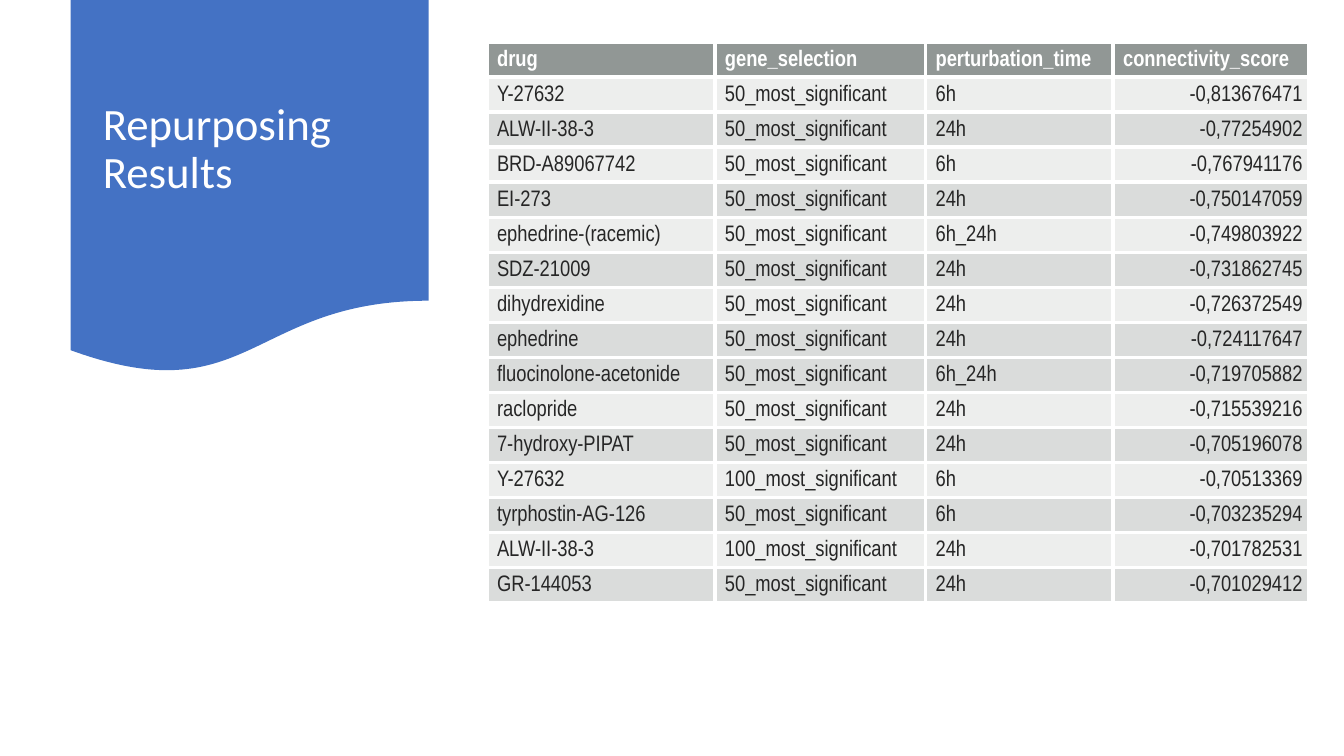
import lxml.etree
import pptx
import pptx.dml.color
import pptx.enum.shapes
import pptx.enum.text
import pptx.oxml.ns
import pptx.util

Inches = pptx.util.Inches
Pt = pptx.util.Pt
RGBColor = pptx.dml.color.RGBColor
Anchor = pptx.enum.text.MSO_ANCHOR
Align = pptx.enum.text.PP_ALIGN
qn = pptx.oxml.ns.qn

WHITE = RGBColor(0xFF, 0xFF, 0xFF)
BLUE = RGBColor(0x44, 0x72, 0xC4)
HEADER_GREY = RGBColor(0x63, 0x6B, 0x68)
BODY_GREY = RGBColor(0x87, 0x8E, 0x8B)
INK = RGBColor(0x26, 0x26, 0x26)

SLIDE_WIDTH, SLIDE_HEIGHT = Inches(13.33), Inches(7.5)
BANNER_BOX = (Inches(0.7), 0, Inches(3.55), Inches(3.72))
TABLE_BOX = (Inches(4.83), Inches(0.42), Inches(8.15), Inches(5.56))
COLUMN_SHARES = (2.26, 2.09, 1.86, 1.94)
BAND_SHIFT_ROW = 8

TITLE_FONT = {"name": "Calibri", "size": Pt(32), "bold": False}
TABLE_FONT = {"name": "Arial Narrow", "size": Pt(16)}
CELL_FORMAT = {
    "margin_left": Inches(0.1),
    "margin_right": Inches(0.06),
    "margin_top": Inches(0.03),
    "margin_bottom": Inches(0.06),
    "vertical_anchor": Anchor.BOTTOM,
}

HEADINGS = ("drug", "gene_selection", "perturbation_time", "connectivity_score")
RESULTS = (
    ("Y-27632", 50, "6h", "-0,813676471"),
    ("ALW-II-38-3", 50, "24h", "-0,77254902"),
    ("BRD-A89067742", 50, "6h", "-0,767941176"),
    ("EI-273", 50, "24h", "-0,750147059"),
    ("ephedrine-(racemic)", 50, "6h_24h", "-0,749803922"),
    ("SDZ-21009", 50, "24h", "-0,731862745"),
    ("dihydrexidine", 50, "24h", "-0,726372549"),
    ("ephedrine", 50, "24h", "-0,724117647"),
    ("fluocinolone-acetonide", 50, "6h_24h", "-0,719705882"),
    ("raclopride", 50, "24h", "-0,715539216"),
    ("7-hydroxy-PIPAT", 50, "24h", "-0,705196078"),
    ("Y-27632", 100, "6h", "-0,70513369"),
    ("tyrphostin-AG-126", 50, "6h", "-0,703235294"),
    ("ALW-II-38-3", 100, "24h", "-0,701782531"),
    ("GR-144053", 50, "24h", "-0,701029412"),
)


def apply_format(target, values):
    """Set each named attribute of the target."""
    for name, value in values.items():
        setattr(target, name, value)


def format_font(font, values, color):
    """Apply font values and a text colour."""
    apply_format(font, values)
    font.color.rgb = color


def add_title_banner(slide, box):
    """Place the wavy banner behind the slide title."""
    left, top, width, height = box
    banner = slide.shapes.add_shape(
        pptx.enum.shapes.MSO_SHAPE.FLOWCHART_DOCUMENT, left, top, width, height)
    banner.shadow.inherit = False
    banner.fill.solid()
    banner.fill.fore_color.rgb = BLUE
    banner.line.fill.background()

    title = slide.shapes.title
    title.element.addprevious(banner.element)
    apply_format(title, {
        "left": left + Inches(0.22), "top": top + Inches(0.19),
        "width": Inches(3.11), "height": Inches(2.59),
    })
    apply_format(title.text_frame, {
        "text": "Repurposing Results", "word_wrap": True,
        "auto_size": pptx.enum.text.MSO_AUTO_SIZE.NONE,
        "vertical_anchor": Anchor.MIDDLE,
    })
    para = title.text_frame.paragraphs[0]
    apply_format(para, {"alignment": Align.LEFT, "line_spacing": 0.9})
    format_font(para.font, TITLE_FONT, WHITE)


def paint_cell(cell, color, opacity):
    """Give a cell white borders and a translucent fill."""
    cell.fill.solid()
    cell.fill.fore_color.rgb = color
    properties = cell._tc.get_or_add_tcPr()
    tint = properties.find(qn("a:solidFill")).find(qn("a:srgbClr"))
    lxml.etree.SubElement(tint, qn("a:alpha"), val=str(opacity * 1000))
    for position, side in enumerate(("a:lnL", "a:lnR", "a:lnT", "a:lnB")):
        border = lxml.etree.Element(qn(side), w=str(Pt(3)))
        paint = lxml.etree.SubElement(border, qn("a:solidFill"))
        lxml.etree.SubElement(paint, qn("a:srgbClr"), val=str(WHITE))
        properties.insert(position, border)


def row_style(row):
    """Return fill colour, opacity, text colour and weight for a table row."""
    if row == 0:
        return HEADER_GREY, 70, WHITE, True
    dark = (row % 2 == 0) == (row <= BAND_SHIFT_ROW)
    return BODY_GREY, 30 if dark else 15, INK, False


def add_results_table(slide, box):
    """Fill the box with the table of drug scores."""
    left, top, width, height = box
    rows = [HEADINGS] + [
        (drug, f"{count}_most_significant", time, score)
        for drug, count, time, score in RESULTS]
    table = slide.shapes.add_table(
        len(rows), len(HEADINGS), left, top, width, height).table
    apply_format(table, {"first_row": False, "horz_banding": False})
    for column, share in zip(table.columns, COLUMN_SHARES):
        column.width = int(width * share / sum(COLUMN_SHARES))
    for row, texts in enumerate(rows):
        table.rows[row].height = height // len(rows)
        fill, opacity, ink, bold = row_style(row)
        for column, text in enumerate(texts):
            cell = table.cell(row, column)
            cell.text = text
            apply_format(cell, CELL_FORMAT)
            paint_cell(cell, fill, opacity)
            para = cell.text_frame.paragraphs[0]
            is_score = row > 0 and column == len(HEADINGS) - 1
            para.alignment = Align.RIGHT if is_score else Align.LEFT
            format_font(para.runs[0].font, {**TABLE_FONT, "bold": bold}, ink)


def main():
    """Build and save the deck."""
    deck = pptx.Presentation()
    apply_format(deck, {"slide_width": SLIDE_WIDTH, "slide_height": SLIDE_HEIGHT})
    slide = deck.slides.add_slide(deck.slide_layouts.get_by_name("Title Only"))
    add_title_banner(slide, BANNER_BOX)
    add_results_table(slide, TABLE_BOX)
    deck.save("out.pptx")


if __name__ == "__main__":
    main()
